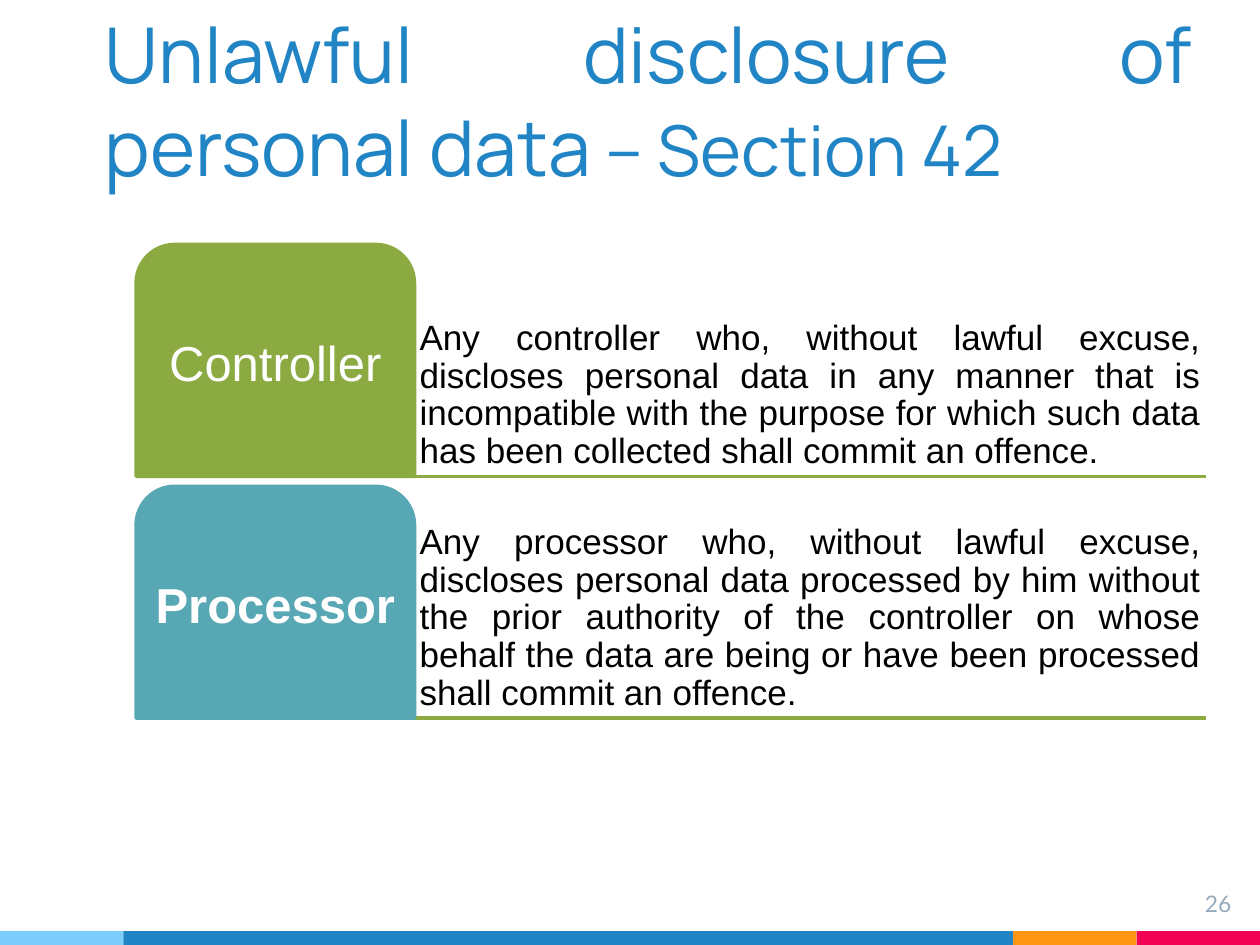
from itertools import pairwise

from lxml import etree
from pptx import Presentation
from pptx.dml import color
from pptx.enum import shapes, text
from pptx.oxml import ns
from pptx.util import Inches, Pt

GREEN, TEAL, BLUE = "8BAB42", "57A7B5", "2185C5"
OFFENCES = [
    ("Controller", False, GREEN,
     "Any controller who, without lawful excuse, discloses personal data in any manner that is "
     "incompatible with the purpose for which such data has been collected shall commit an offence."),
    ("Processor", True, TEAL,
     "Any processor who, without lawful excuse, discloses personal data processed by him without "
     "the prior authority of the controller on whose behalf the data are being or have been "
     "processed shall commit an offence."),
]


def rgb(value):
    """Return the colour for a hex string."""
    return color.RGBColor.from_string(value)


def lengths(box):
    """Turn a box given in inches into lengths."""
    return [Inches(value) for value in box]


def write(frame, runs, font, hue, align, anchor, inset, bold=False, spacing=None):
    """Fill a text frame with one paragraph of (wording, size) runs."""
    frame.word_wrap = True
    frame.auto_size = text.MSO_AUTO_SIZE.NONE
    frame.vertical_anchor = anchor
    frame.margin_left = frame.margin_right = Inches(inset)
    frame.margin_top = frame.margin_bottom = Inches(inset)
    para = frame.paragraphs[0]
    para.alignment = align
    para.line_spacing = spacing
    for wording, size in runs:
        span = para.add_run()
        span.text = wording
        span.font.name, span.font.size, span.font.bold = font, Pt(size), bold
        span.font.color.rgb = rgb(hue)
    return para


def add_panel(page, kind, box, hue):
    """Add a flat filled shape without an outline."""
    panel = page.shapes.add_shape(kind, *lengths(box))
    panel.shadow.inherit = False
    panel.fill.solid()
    panel.fill.fore_color.rgb = rgb(hue)
    panel.line.fill.background()
    return panel


def add_rule(page, left, right, y):
    """Add the green line under an offence."""
    rule = page.shapes.add_connector(shapes.MSO_CONNECTOR.STRAIGHT, *lengths((left, y, right, y)))
    rule.line.color.rgb = rgb(GREEN)
    rule.line.width = Pt(2)
    properties = rule._element.find(ns.qn("p:spPr"))
    etree.SubElement(properties, ns.qn("a:effectLst"))


def add_title(page, box):
    """Place the title placeholder in its box."""
    title = page.shapes.title
    title.left, title.top, title.width, title.height = lengths(box)
    runs = [("Unlawful disclosure of personal data", 44), (" – Section 42", 40)]
    para = write(title.text_frame, runs, "Manrope", BLUE,
                 text.PP_ALIGN.JUSTIFY, text.MSO_ANCHOR.BOTTOM, 0.1)
    para._p.get_or_add_pPr().set("marL", str(Inches(0.04)))


def add_offence(page, box, label, bold, hue, wording):
    """Add one row: a tab with its label, the wording and a rule."""
    left, top, width, height = box
    tab_width = 2.21
    add_rule(page, left, left + width, top + height)
    body = page.shapes.add_textbox(*lengths((left + tab_width, top, width - tab_width, height)))
    write(body.text_frame, [(wording, 20)], "Arial", "000000",
          text.PP_ALIGN.JUSTIFY, text.MSO_ANCHOR.BOTTOM, 0.04, spacing=0.9)
    tab = add_panel(page, shapes.MSO_SHAPE.ROUND_2_SAME_RECTANGLE,
                    (left, top, tab_width, height), hue)
    tab.line.color.rgb = rgb(hue)
    tab.line.width = Pt(2)
    tab.adjustments[0], tab.adjustments[1] = 0.167, 0
    write(tab.text_frame, [(label, 28)], "Arial", "FFFFFF",
          text.PP_ALIGN.CENTER, text.MSO_ANCHOR.MIDDLE, 0.06, bold, 0.9)


def add_offences(page, box):
    """Stack the offences in equal rows with a small gap."""
    left, top, width, height = box
    gap = 0.08
    row = (height - gap * (len(OFFENCES) - 1)) / len(OFFENCES)
    for index, (label, bold, hue, wording) in enumerate(OFFENCES):
        add_offence(page, (left, top + index * (row + gap), width, row),
                    label, bold, hue, wording)


def add_footer(page, box):
    """Add the coloured strip along the bottom."""
    left, top, width, height = box
    end = 0.98
    edges = [0, end, width - 2 * end, width - end, width]
    for (start, stop), hue in zip(pairwise(edges), ("7ECEFD", BLUE, "FF9715", "F20253")):
        add_panel(page, shapes.MSO_SHAPE.RECTANGLE,
                  (left + start, top, stop - start, height), hue)


def add_page_number(page, box):
    """Add the page number."""
    number = page.shapes.add_textbox(*lengths(box))
    write(number.text_frame, [("26", 13)], "Lato", "97ABBC",
          text.PP_ALIGN.RIGHT, text.MSO_ANCHOR.TOP, 0.1)


def main():
    """Build and save the deck."""
    deck = Presentation()
    deck.slide_width, deck.slide_height = Inches(10), Inches(7.5)
    page = deck.slides.add_slide(deck.slide_layouts[5])
    add_footer(page, (0, 7.39, 10, 0.11))
    add_title(page, (0.69, 0.27, 8.88, 1.35))
    add_page_number(page, (9.27, 6.96, 0.6, 0.46))
    add_offences(page, (1.08, 1.94, 8.49, 3.76))
    deck.save("out.pptx")


if __name__ == "__main__":
    main()
